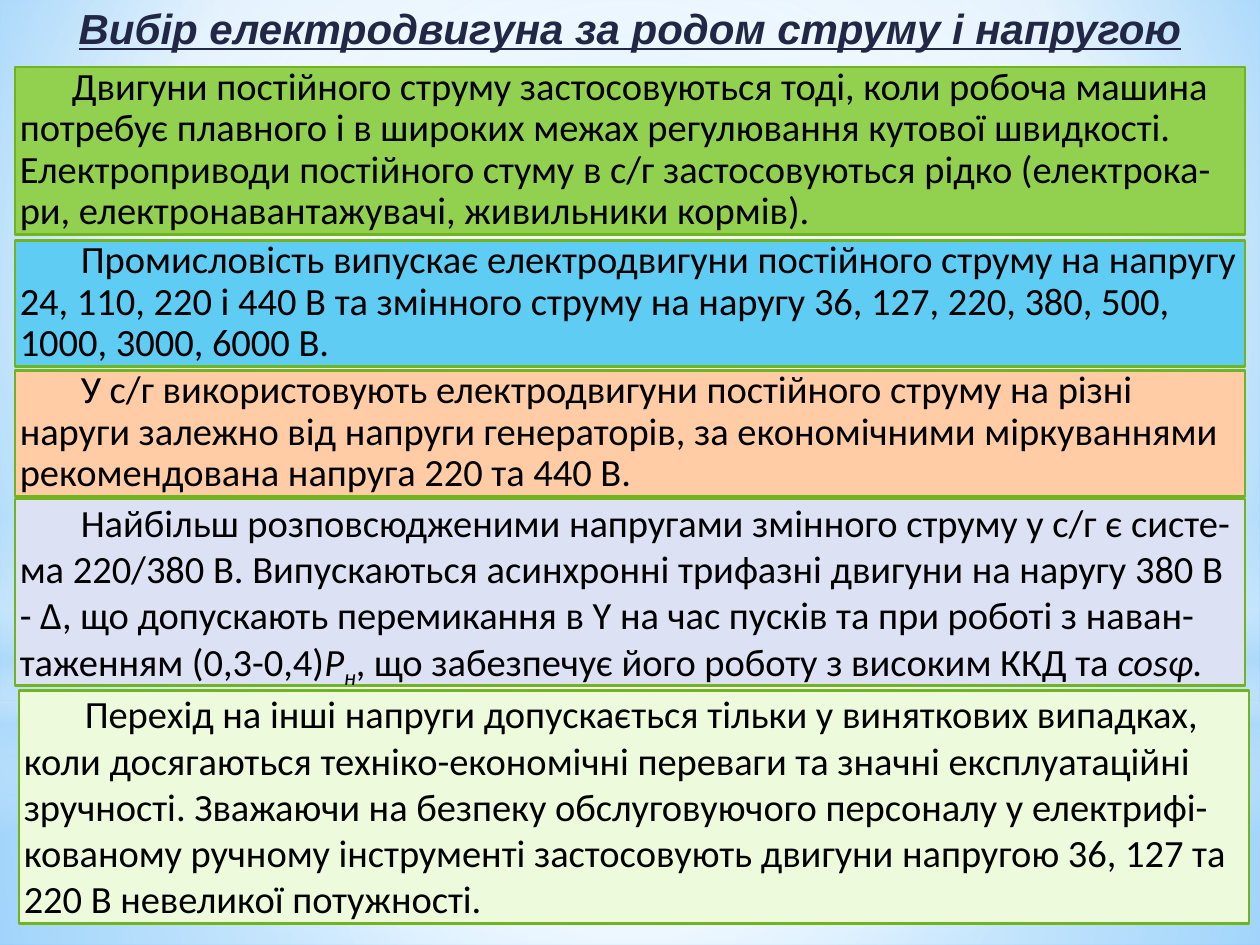
"""Build a slide on choosing an electric motor by current type and voltage."""
from lxml import etree
from pptx import Presentation, util as u
from pptx.dml.color import RGBColor
from pptx.enum import shapes, text
from pptx.oxml.ns import qn

THEME = {
    "title": {"font": "Arial", "size": 24, "color": "212745"},
    "body": {"font": "Calibri", "size": 22, "color": "000000"},
    "border": "72B41D",
    "border_width": 1.25,
}
WHITE, SKY = "FFFFFF", "B4DCFA"
CENTER = (50, 50, 50, 50)

BACKGROUND = ([(0, "9ED5FF", 100), (60, WHITE, 100), (100, "5BB9FF", 100)], (20, 10, 20, 60))

# kind, top, height, gradient stops (position, color, opacity), focus or None for vertical
GLOWS = [
    ("RECTANGLE", 14.17, 4.88, [(0, WHITE, 91), (37, WHITE, 76), (100, SKY, 79)], CENTER),
    ("RECTANGLE", 0, 14.17, [(0, WHITE, 89), (48, WHITE, 62), (100, SKY, 79)], CENTER),
    ("RECTANGLE", 10.46, 6.35, [(0, WHITE, 0), (29, WHITE, 30), (45, SKY, 40),
                                (55, WHITE, 26), (65, SKY, 60), (100, WHITE, 0)], None),
    ("OVAL", 4.45, 14.17, [(0, WHITE, 100), (56, WHITE, 0)], CENTER),
]

TITLE = "Вибір електродвигуна за родом струму і напругою"

# left, top, height, fill, first-line indent, line spacing, spans (text, style)
PANELS = [
    (0.3, 1.35, 3.38, "92D050", 1.05, 0.9, [
        ("Двигуни постійного струму застосовуються тоді, коли робоча машина потребує "
         "плавного і в широких межах регулювання кутової швидкості. Електроприводи "
         "постійного стуму в с/г застосовуються рідко (електрока-ри, "
         "електронавантажувачі, живильники кормів).", "")]),
    (0.3, 4.85, 2.54, "5ECCF3", 1.23, 0.9, [
        ("Промисловість випускає електродвигуни постійного струму на напругу 24, 110, "
         "220 і 440 В та змінного струму на наругу 36, 127, 220, 380, 500, 1000, 3000, "
         "6000 В.", "")]),
    (0.3, 7.47, 2.54, "FFCCA6", 1.23, 0.9, [
        ("У с/г використовують електродвигуни постійного струму на різні наруги залежно "
         "від напруги генераторів, за економічними міркуваннями рекомендована напруга "
         "220 та 440 В.", "")]),
    (0.3, 10.06, 3.76, "DCE1F4", 1.23, 1.0, [
        ("Найбільш розповсюдженими напругами змінного струму у с/г є систе-ма 220/380 В. "
         "Випускаються асинхронні трифазні двигуни на наругу 380 В - Δ, що допускають "
         "перемикання в Y на час пусків та при роботі з наван-таженням (0,3-0,4)", ""),
        ("Р", "italic"),
        ("н", "italic subscript"),
        (", що забезпечує його роботу з високим ККД та ", ""),
        ("cosφ.", "italic")]),
    (0.38, 13.92, 4.7, "EDFBDC", 1.23, 1.0, [
        ("Перехід на інші напруги допускається тільки у виняткових випадках, коли "
         "досягаються техніко-економічні переваги та значні експлуатаційні зручності. "
         "Зважаючи на безпеку обслуговуючого персоналу у електрифі-кованому ручному "
         "інструменті застосовують двигуни напругою 36, 127 та 220 В невеликої "
         "потужності.", "")]),
]
PAGE_WIDTH, PAGE_HEIGHT, PANEL_WIDTH = 25.4, 19.05, 24.8


def apply_gradient(fill, element, stops, focus):
    fill.solid()
    fill.fore_color.rgb = RGBColor.from_string(WHITE)
    solid = element.xpath(".//a:solidFill")[0]
    gradient = etree.Element(qn("a:gradFill"), rotWithShape="1")
    stop_list = etree.SubElement(gradient, qn("a:gsLst"))
    for position, color, opacity in stops:
        stop = etree.SubElement(stop_list, qn("a:gs"), pos=str(position * 1000))
        shade = etree.SubElement(stop, qn("a:srgbClr"), val=color)
        if opacity < 100:
            etree.SubElement(shade, qn("a:alpha"), val=str(opacity * 1000))
    if focus:
        circle = etree.SubElement(gradient, qn("a:path"), path="circle")
        edges = {side: str(value * 1000) for side, value in zip("ltrb", focus)}
        etree.SubElement(circle, qn("a:fillToRect"), **edges)
    else:
        etree.SubElement(gradient, qn("a:lin"), ang="5400000", scaled="0")
    solid.getparent().replace(solid, gradient)


def add_glow(page, kind, top, height, stops, focus):
    glow = page.shapes.add_shape(shapes.MSO_SHAPE[kind], 0, u.Cm(top),
                                 u.Cm(PAGE_WIDTH), u.Cm(height))
    glow.shadow.inherit = False
    glow.line.fill.background()
    apply_gradient(glow.fill, glow.element, stops, focus)


def prepare_text(box, margin, alignment, spacing):
    frame = box.text_frame
    frame.word_wrap = True
    frame.auto_size = text.MSO_AUTO_SIZE.SHAPE_TO_FIT_TEXT
    frame.vertical_anchor = text.MSO_ANCHOR.TOP
    frame.margin_left = frame.margin_right = u.Cm(margin)
    frame.margin_top = frame.margin_bottom = 0
    para = frame.paragraphs[0]
    para.alignment = alignment
    para.line_spacing = spacing
    return para


def add_span(para, content, look, style=""):
    span = para.add_run()
    span.text = content
    span.font.name = look["font"]
    span.font.size = u.Pt(look["size"])
    span.font.color.rgb = RGBColor.from_string(look["color"])
    span.font.bold = "bold" in style
    span.font.italic = "italic" in style
    span.font.underline = "underline" in style
    if "subscript" in style:
        span.font.element.set("baseline", "-25000") if hasattr(span.font, "element") else \
            span._r.get_or_add_rPr().set("baseline", "-25000")


def add_title(page):
    box = page.shapes.add_textbox(u.Cm(0.3), u.Cm(0.2), u.Cm(PANEL_WIDTH), u.Cm(0.86))
    para = prepare_text(box, 0, text.PP_ALIGN.CENTER, 0.85)
    add_span(para, TITLE, THEME["title"], "bold italic underline")


def add_panel(page, left, top, height, color, indent, spacing, spans):
    box = page.shapes.add_shape(shapes.MSO_SHAPE.RECTANGLE, u.Cm(left), u.Cm(top),
                                u.Cm(PANEL_WIDTH), u.Cm(height))
    box.shadow.inherit = False
    box.fill.solid()
    box.fill.fore_color.rgb = RGBColor.from_string(color)
    box.line.color.rgb = RGBColor.from_string(THEME["border"])
    box.line.width = u.Pt(THEME["border_width"])
    para = prepare_text(box, 0.1, text.PP_ALIGN.LEFT, spacing)
    para._p.get_or_add_pPr().set("indent", str(u.Cm(indent)))
    for content, style in spans:
        add_span(para, content, THEME["body"], style)


def main():
    deck = Presentation()
    deck.slide_width, deck.slide_height = u.Cm(PAGE_WIDTH), u.Cm(PAGE_HEIGHT)
    page = deck.slides.add_slide(deck.slide_layouts[6])
    apply_gradient(page.background.fill, page.element, *BACKGROUND)
    for glow in GLOWS:
        add_glow(page, *glow)
    add_title(page)
    for panel in PANELS:
        add_panel(page, *panel)
    deck.save("out.pptx")


if __name__ == "__main__":
    main()
